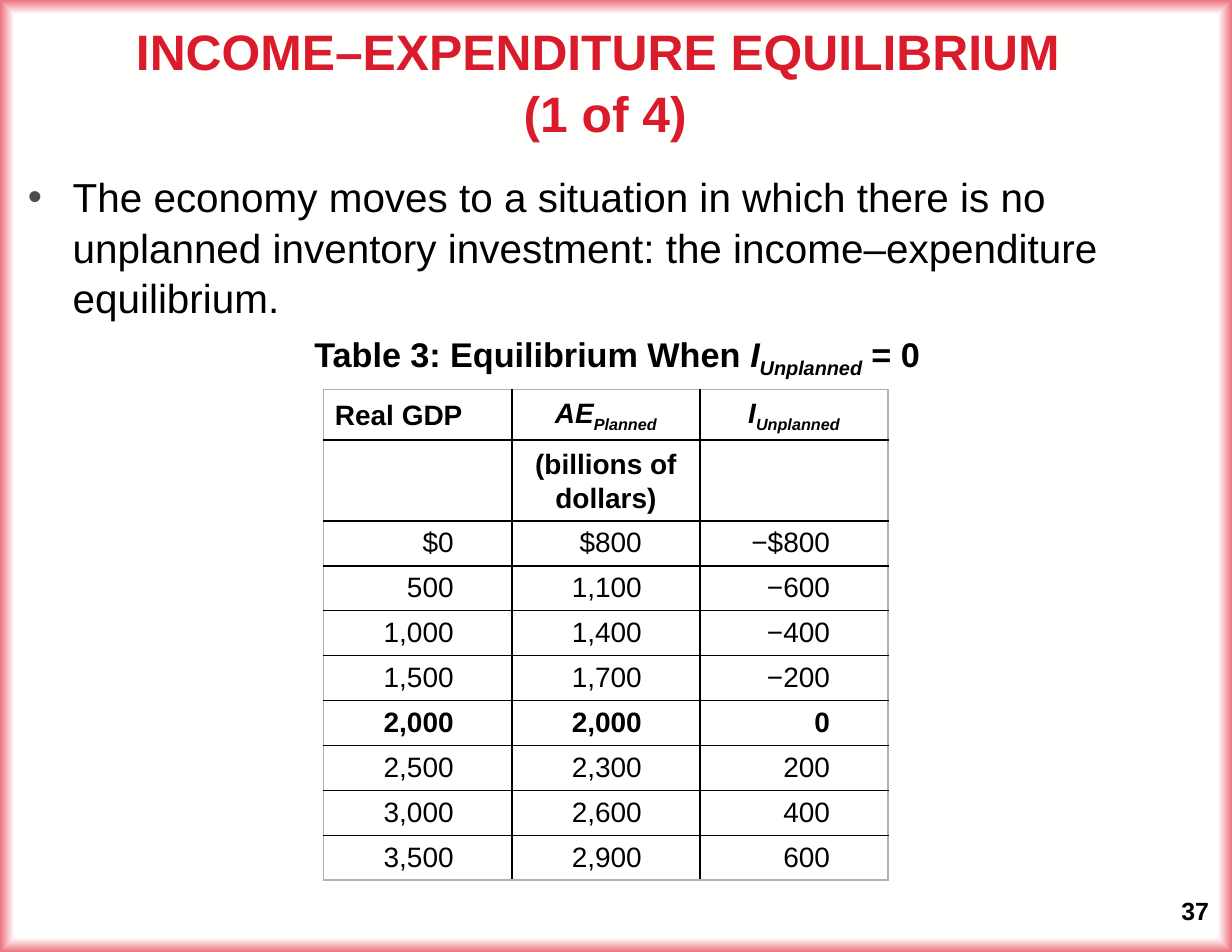
from dataclasses import dataclass

from lxml import etree
from pptx import Presentation
from pptx import util as u
from pptx.dml.color import RGBColor
from pptx.enum import text
from pptx.oxml import parse_xml
from pptx.oxml.ns import qn

DRAWING_NS = "http://schemas.openxmlformats.org/drawingml/2006/main"
LEFT, CENTER, RIGHT = text.PP_ALIGN.LEFT, text.PP_ALIGN.CENTER, text.PP_ALIGN.RIGHT
MIDDLE, TOP = text.MSO_ANCHOR.MIDDLE, text.MSO_ANCHOR.TOP


@dataclass(frozen=True)
class Theme:
    font: str = "Arial"
    ink: str = "000000"
    accent: str = "DA1B2C"
    bullet: str = "4E4E4E"
    frame: str = "B2B2B2"
    paper: str = "FFFFFE"
    glow: str = "ED727D"
    title: int = 32
    body: int = 26
    caption: int = 22
    cell: int = 18
    page: int = 16


def set_text(paragraph, content, size, color, font, bold=False, italic=False,
             align=LEFT, spacing=None, before=0):
    """Fill a paragraph; content is a string or (string, styles) pairs.

    Styles are letters: i for italic, s for subscript.
    """
    paragraph.alignment = align
    paragraph.space_before = u.Pt(before)
    if spacing:
        paragraph.line_spacing = spacing
    pieces = [(content, "")] if isinstance(content, str) else content
    for words, styles in pieces:
        for index, line in enumerate(words.split("\n")):
            if index:
                paragraph.add_line_break()
            run = paragraph.add_run()
            run.text = line
            run.font.name = font
            run.font.size = u.Pt(size)
            run.font.bold = bold
            run.font.italic = italic or "i" in styles
            run.font.color.rgb = RGBColor.from_string(color)
            if "s" in styles:
                run.font._element.set("baseline", "-25000")


class Page:
    """The current slide on a grid of 110 columns by 85 rows."""

    def __init__(self, deck, theme):
        self.theme = theme
        self.slide = deck.slides.add_slide(deck.slide_layouts[6])
        self.column = deck.slide_width / 110
        self.row = deck.slide_height / 85

    def place(self, left, top, width, height):
        return (int(left * self.column), int(top * self.row),
                int(width * self.column), int(height * self.row))

    def words(self, paragraph, content, size, color=None, **style):
        set_text(paragraph, content, size, color or self.theme.ink, self.theme.font, **style)

    def glowing_edge(self):
        fill = self.slide.background.fill
        fill.gradient()
        gradient = self.slide.background._cSld.find(".//" + qn("a:gradFill"))
        stops = "".join(
            f'<a:gs pos="{position}"><a:srgbClr val="{color}"/></a:gs>'
            for position, color in ((0, self.theme.paper), (97000, self.theme.paper),
                                    (100000, self.theme.glow)))
        gradient.getparent().replace(gradient, parse_xml(
            f'<a:gradFill xmlns:a="{DRAWING_NS}" rotWithShape="0"><a:gsLst>{stops}</a:gsLst>'
            '<a:path path="shape"><a:fillToRect l="50000" t="50000" r="50000" b="50000"/>'
            '</a:path></a:gradFill>'))

    def textbox(self, *place, anchor=TOP, wrap=True):
        frame = self.slide.shapes.add_textbox(*self.place(*place)).text_frame
        frame.word_wrap = wrap
        frame.vertical_anchor = anchor
        frame.margin_left = frame.margin_right = u.Inches(0.1)
        frame.margin_top = frame.margin_bottom = u.Inches(0.1 if wrap else 0.05)
        return frame

    def bullet(self, paragraph, indent):
        properties = paragraph._p.get_or_add_pPr()
        properties.set("marL", str(u.Inches(indent)))
        properties.set("indent", str(-u.Inches(indent)))
        color = etree.SubElement(properties, qn("a:buClr"))
        etree.SubElement(color, qn("a:srgbClr"), val=self.theme.bullet)
        etree.SubElement(properties, qn("a:buFont"), typeface=self.theme.font)
        etree.SubElement(properties, qn("a:buChar"), char="•")

    def borders(self, cell, edges):
        properties = cell._tc.get_or_add_tcPr()
        for index, (side, outer) in enumerate(edges.items()):
            color = self.theme.frame if outer else self.theme.ink
            properties.insert(index, parse_xml(
                f'<a:ln{side} xmlns:a="{DRAWING_NS}" w="{u.Pt(1)}"><a:solidFill>'
                f'<a:srgbClr val="{color}"/></a:solidFill></a:ln{side}>'))

    def table(self, left, top, column_width, heights, rows, headings, strong):
        count = len(rows[0])
        place = self.place(left, top, column_width * count, sum(heights))
        table = self.slide.shapes.add_table(len(rows), count, *place).table
        table.first_row = table.horz_banding = False
        for column in table.columns:
            column.width = int(column_width * self.column)
        for r, (values, height) in enumerate(zip(rows, heights)):
            table.rows[r].height = int(height * self.row)
            for c, value in enumerate(values):
                cell = table.cell(r, c)
                heading = r < headings
                cell.fill.background()
                cell.margin_top = cell.margin_bottom = u.Inches(0.04)
                cell.margin_left = u.Inches(0.1)
                # Figures line up on the right, inset from the cell edge
                cell.margin_right = u.Inches(0.1 if heading else 0.52)
                cell.vertical_anchor = MIDDLE if heading else TOP
                align = RIGHT if not heading else CENTER if c else LEFT
                self.words(cell.text_frame.paragraphs[0], value, self.theme.cell,
                           bold=heading or r == strong, align=align, spacing=1.07)
                self.borders(cell, {"L": c == 0, "R": c == count - 1,
                                    "T": r == 0, "B": r == len(rows) - 1})


def main():
    deck = Presentation()
    deck.slide_width, deck.slide_height = u.Inches(11), u.Inches(8.5)
    theme = Theme()
    page = Page(deck, theme)
    page.glowing_edge()

    # Page number
    number = page.textbox(104.5, 79.5, 4.8, 3.7, wrap=False)
    page.words(number.paragraphs[0], "37", theme.page, bold=True)

    # Title
    title = page.textbox(-0.6, 1.2, 109.3, 11.9, anchor=MIDDLE)
    page.words(title.paragraphs[0], "INCOME–EXPENDITURE EQUILIBRIUM \n(1 of 4)",
               theme.title, theme.accent, bold=True, align=CENTER, spacing=1.04)

    # Statement and table caption
    body = page.textbox(1.5, 14.2, 107.2, 19.4)
    statement = body.paragraphs[0]
    page.bullet(statement, 0.4)
    page.words(statement, "The economy moves to a situation in which there is no unplanned "
               "inventory investment: the income–expenditure equilibrium.",
               theme.body, spacing=1.04)
    page.words(body.add_paragraph(),
               [("Table 3: Equilibrium When ", ""), ("I", "i"), ("Unplanned", "is"), (" = 0", "")],
               theme.caption, bold=True, align=CENTER, spacing=1.04, before=6.2)

    # Equilibrium table
    headings = [
        ("Real GDP", [("AE", "i"), ("Planned", "is")], [("I", "i"), ("Unplanned", "is")]),
        ("", "(billions of dollars)", ""),
    ]
    figures = [
        ("$0", "$800", "−$800"),
        ("500", "1,100", "−600"),
        ("1,000", "1,400", "−400"),
        ("1,500", "1,700", "−200"),
        ("2,000", "2,000", "0"),
        ("2,500", "2,300", "200"),
        ("3,000", "2,600", "400"),
        ("3,500", "2,900", "600"),
    ]
    equilibrium = len(headings) + figures.index(("2,000", "2,000", "0"))
    page.table(28.9, 34.8, 16.8, [4.5, 7] + [4] * len(figures),
               headings + figures, len(headings), equilibrium)

    deck.save("out.pptx")


if __name__ == "__main__":
    main()
